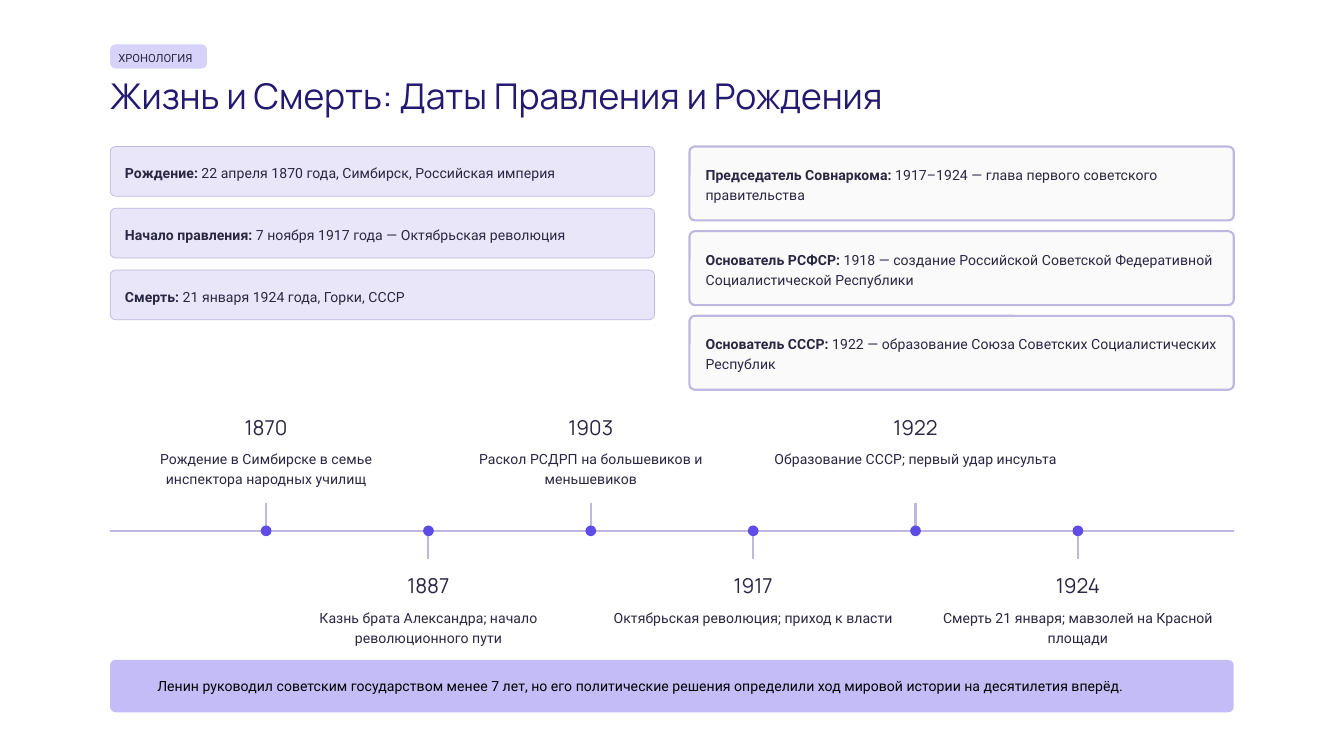
from dataclasses import dataclass

from lxml import etree
from pptx import Presentation
from pptx.dml.color import RGBColor
from pptx.enum.shapes import MSO_CONNECTOR, MSO_SHAPE
from pptx.enum.text import PP_ALIGN
from pptx.oxml.ns import qn
from pptx.util import Inches, Pt

ROUNDED = MSO_SHAPE.ROUNDED_RECTANGLE
OVAL = MSO_SHAPE.OVAL
STRAIGHT = MSO_CONNECTOR.STRAIGHT
LEFT, CENTER = PP_ALIGN.LEFT, PP_ALIGN.CENTER


@dataclass(frozen=True)
class Theme:
    title: str = "231971"
    ink: str = "2A2742"
    black: str = "000000"
    tag: str = "D7D2F9"
    lilac: str = "E9E6FA"
    paper: str = "FAFAFA"
    edge: str = "BDB8DF"
    dot: str = "5E4CE6"
    banner: str = "C3BCF6"
    heading_font: str = "Manrope"
    body_font: str = "Roboto"
    heading_spacing: float = 1.04
    body_spacing: float = 1.19
    tag_size: float = 6
    title_size: float = 19
    year_size: float = 11
    body_size: float = 7.5
    thin: float = 0.38
    thick: float = 1.13


THEME = Theme()


@dataclass(frozen=True)
class CardStyle:
    height: float
    pitch: float
    inset: float
    fill: str
    line: float
    lines: int
    opacity: int = 100


DATE_CARD = CardStyle(0.37, 0.46, 0.11, THEME.lilac, THEME.thin, 1)
ROLE_CARD = CardStyle(0.55, 0.63, 0.12, THEME.paper, THEME.thick, 2, 95)
LINE_HEIGHT = 0.15
CORNER = 0.04

DATES = [
    ("Рождение:", " 22 апреля 1870 года, Симбирск, Российская империя"),
    ("Начало правления:", " 7 ноября 1917 года — Октябрьская революция"),
    ("Смерть:", " 21 января 1924 года, Горки, СССР"),
]
ROLES = [
    ("Председатель Совнаркома:", " 1917–1924 — глава первого советского правительства"),
    ("Основатель РСФСР:",
     " 1918 — создание Российской Советской Федеративной Социалистической Республики"),
    ("Основатель СССР:", " 1922 — образование Союза Советских Социалистических Республик"),
]
EVENTS = [
    ("1870", "Рождение в Симбирске в семье инспектора народных училищ"),
    ("1887", "Казнь брата Александра; начало революционного пути"),
    ("1903", "Раскол РСДРП на большевиков и меньшевиков"),
    ("1917", "Октябрьская революция; приход к власти"),
    ("1922", "Образование СССР; первый удар инсульта"),
    ("1924", "Смерть 21 января; мавзолей на Красной площади"),
]


def rgb(value):
    return RGBColor.from_string(value)


def add_panel(slide, kind, left, top, width, height, fill, line=None, opacity=100):
    panel = slide.shapes.add_shape(
        kind, Inches(left), Inches(top), Inches(width), Inches(height))
    panel.shadow.inherit = False
    if kind == ROUNDED:
        panel.adjustments[0] = CORNER / height
    panel.fill.solid()
    panel.fill.fore_color.rgb = rgb(fill)
    if opacity < 100:
        color = panel._element.spPr.find(qn("a:solidFill"))[0]
        etree.SubElement(color, qn("a:alpha")).set("val", str(opacity * 1000))
    if line:
        panel.line.color.rgb = rgb(THEME.edge)
        panel.line.width = Pt(line)
    else:
        panel.line.fill.background()


def add_line(slide, x1, y1, x2, y2):
    rule = slide.shapes.add_connector(
        STRAIGHT, Inches(x1), Inches(y1), Inches(x2), Inches(y2))
    rule.line.color.rgb = rgb(THEME.edge)
    rule.line.width = Pt(THEME.thick)
    etree.SubElement(rule._element.spPr, qn("a:effectLst"))


def add_text(slide, left, top, width, height, parts, size=THEME.body_size,
             color=THEME.ink, heading=False, align=LEFT):
    """Places one paragraph; parts is a list of (text, bold) pairs."""
    frame = slide.shapes.add_textbox(
        Inches(left), Inches(top), Inches(width), Inches(height)).text_frame
    frame.word_wrap = True
    frame.margin_left = frame.margin_right = frame.margin_top = frame.margin_bottom = 0
    paragraph = frame.paragraphs[0]
    paragraph.alignment = align
    paragraph.line_spacing = THEME.heading_spacing if heading else THEME.body_spacing
    for text, bold in parts:
        run = paragraph.add_run()
        run.text = text
        run.font.name = THEME.heading_font if heading else THEME.body_font
        run.font.size = Pt(size)
        run.font.bold = bold
        run.font.color.rgb = rgb(color)


def add_header(slide, left, top, width):
    add_panel(slide, ROUNDED, left, top, 0.72, 0.18, THEME.tag)
    add_text(slide, left + 0.06, top + 0.03, 1.09, 0.12, [("ХРОНОЛОГИЯ", False)],
             size=THEME.tag_size)
    add_text(slide, left, top + 0.21, width, 0.33,
             [("Жизнь и Смерть: Даты Правления и Рождения", False)],
             size=THEME.title_size, color=THEME.title, heading=True)


def add_cards(slide, left, top, width, cards, style):
    text_height = style.lines * LINE_HEIGHT
    for index, (label, detail) in enumerate(cards):
        card_top = top + index * style.pitch
        add_panel(slide, ROUNDED, left, card_top, width, style.height,
                  style.fill, style.line, style.opacity)
        add_text(slide, left + style.inset, card_top + (style.height - text_height) / 2,
                 width - 2 * style.inset, text_height, [(label, True), (detail, False)])


def add_timeline(slide, left, top, width):
    """Spreads the events evenly, alternating above and below the axis."""
    axis = top + 0.87
    stem, dot = 0.21, 0.08
    label_width, year_width, edge_gap = 2.1, 1.59, 0.11
    first = left + edge_gap + label_width / 2
    step = (width - 2 * edge_gap - label_width) / (len(EVENTS) - 1)

    add_line(slide, left, axis, left + width, axis)
    for index, (year, event) in enumerate(EVENTS):
        center = first + index * step
        above = index % 2 == 0
        year_top = top if above else top + 1.18
        add_line(slide, center, axis, center, axis - stem if above else axis + stem)
        add_panel(slide, OVAL, center - dot / 2, axis - dot / 2, dot, dot, THEME.dot)
        add_text(slide, center - year_width / 2, year_top, year_width, 0.2,
                 [(year, False)], size=THEME.year_size, heading=True, align=CENTER)
        add_text(slide, center - label_width / 2, year_top + 0.25, label_width,
                 2 * LINE_HEIGHT, [(event, False)], align=CENTER)


def add_banner(slide, left, top, width, height):
    add_panel(slide, ROUNDED, left, top, width, height, THEME.banner)
    add_text(slide, left + 0.35, top + 0.11, width - 0.35, LINE_HEIGHT,
             [("Ленин руководил советским государством менее 7 лет, но его политические "
               "решения определили ход мировой истории на десятилетия вперёд.", False)],
             color=THEME.black)


def main():
    deck = Presentation()
    deck.slide_width = Inches(10)
    deck.slide_height = deck.slide_width * 9 // 16
    slide = deck.slides.add_slide(deck.slide_layouts[6])

    left, width, column = 0.82, 8.36, 4.05
    add_header(slide, left, 0.33, 6.9)
    add_cards(slide, left, 1.09, column, DATES, DATE_CARD)
    add_cards(slide, left + width - column, 1.09, column, ROLES, ROLE_CARD)
    add_timeline(slide, left, 3.08, width)
    add_banner(slide, left, 4.91, width, 0.39)
    deck.save("out.pptx")


if __name__ == "__main__":
    main()
